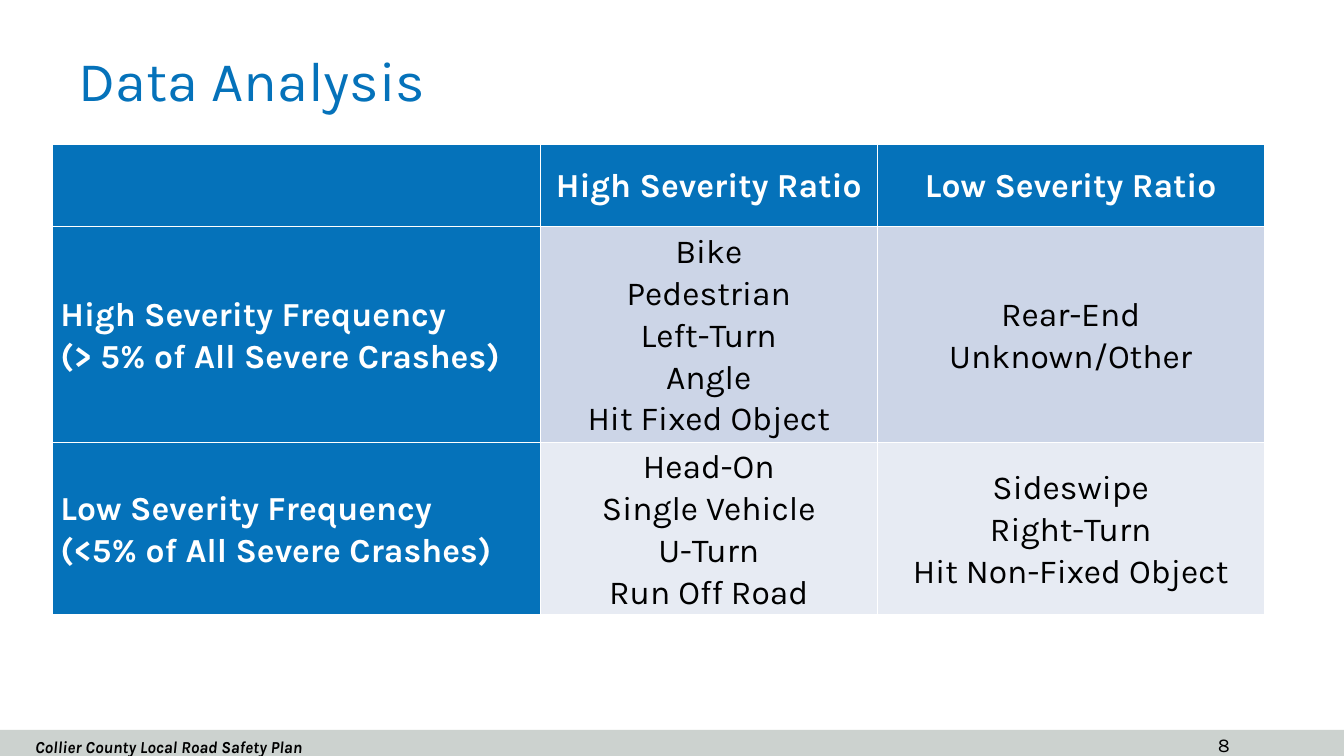
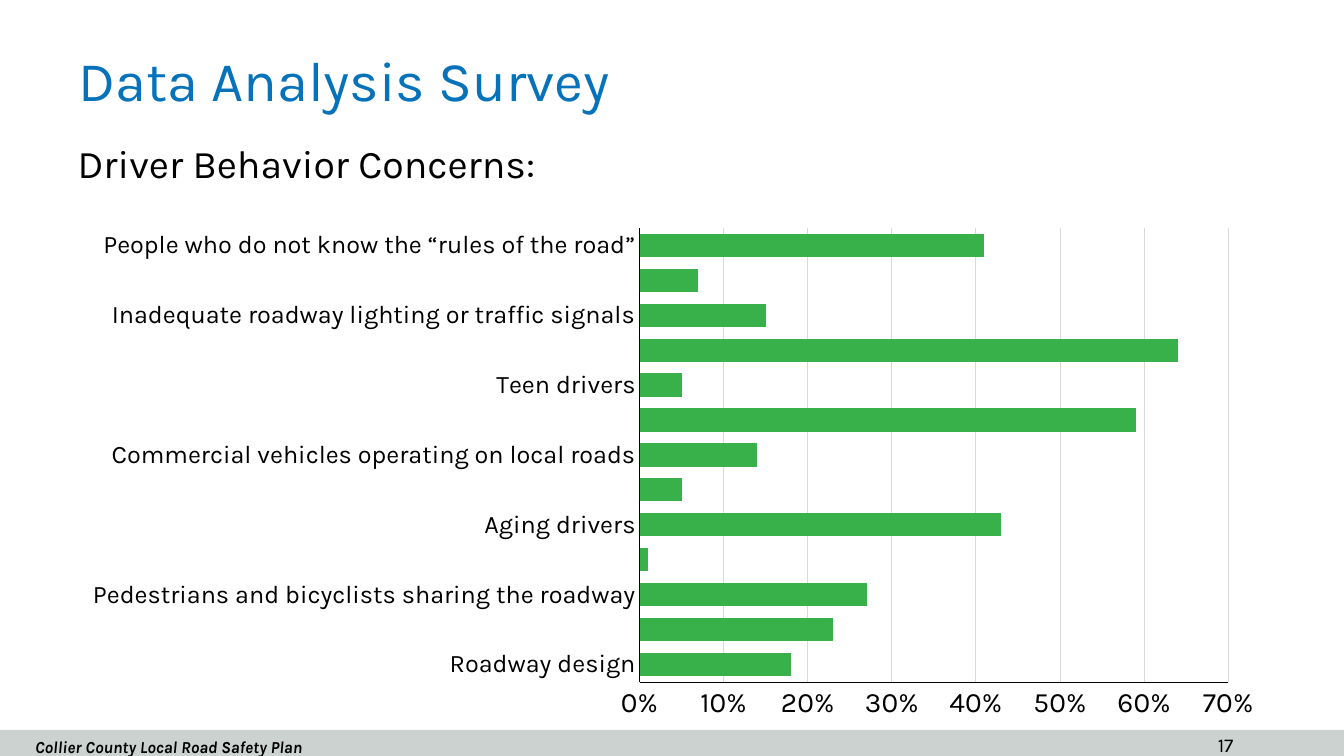
from lxml import etree
from pptx import Presentation
from pptx.chart.data import CategoryChartData
from pptx.dml.color import RGBColor
from pptx.enum import chart as ch, shapes, text
from pptx.oxml import parse_xml
from pptx.oxml.ns import nsdecls, qn
from pptx.util import Inches, Pt

FONT = "Karla"
BLUE = RGBColor(0x05, 0x72, 0xBA)
GREEN = RGBColor(0x39, 0xB1, 0x4A)
BAND = RGBColor(0xCC, 0xD2, 0xCF)
GRID = RGBColor(0xD9, 0xD9, 0xD9)
ROW_DARK = RGBColor(0xCC, 0xD5, 0xE7)
ROW_LIGHT = RGBColor(0xE7, 0xEB, 0xF3)
BLACK = RGBColor(0, 0, 0)
WHITE = RGBColor(0xFF, 0xFF, 0xFF)
LEFT, CENTER = text.PP_ALIGN.LEFT, text.PP_ALIGN.CENTER
TOP, MIDDLE = text.MSO_ANCHOR.TOP, text.MSO_ANCHOR.MIDDLE


def write(tf, content, size, color=BLACK, bold=False, italic=False,
          align=LEFT, anchor=TOP, spacing=None):
    """Fill a text frame, one paragraph per line of content."""
    tf.word_wrap = True
    tf.vertical_anchor = anchor
    for i, line in enumerate(content.split("\n")):
        p = tf.paragraphs[0] if i == 0 else tf.add_paragraph()
        p.alignment = align
        p.space_before = Pt(0)
        p.line_spacing = spacing
        r = p.add_run()
        r.text = line
        f = r.font
        f.name, f.size, f.bold, f.italic = FONT, Pt(size), bold, italic
        f.color.rgb = color


def place(sp, left, top, width, height):
    """Move a placeholder and keep its text at the set size."""
    sp.left, sp.top = Inches(left), Inches(top)
    sp.width, sp.height = Inches(width), Inches(height)
    sp.text_frame.auto_size = text.MSO_AUTO_SIZE.NONE


prs = Presentation()
prs.slide_width, prs.slide_height = Inches(13.33), Inches(7.5)

# Shared frame: footer band, logo space, title, plan name and page number
slides = []
for title, title_width, page, layout in [
    ("Data Analysis", 12.43, "8", 5),
    ("Data Analysis Survey", 10.61, "17", 1),
]:
    s = prs.slides.add_slide(prs.slide_layouts[layout])
    slides.append(s)

    for left, top, width, height, color in [
        (0, 7.24, 13.33, 0.28, BAND),
        (11.71, 0.17, 1.39, 0.8, WHITE),
    ]:
        sp = s.shapes.add_shape(shapes.MSO_SHAPE.RECTANGLE, Inches(left),
                                Inches(top), Inches(width), Inches(height))
        sp.shadow.inherit = False
        sp.fill.solid()
        sp.fill.fore_color.rgb = color
        sp.line.fill.background()

    place(s.shapes.title, 0.68, 0.48, title_width, 0.52)
    write(s.shapes.title.text_frame, title, 40, BLUE, spacing=0.9)
    sp = s.shapes.add_textbox(Inches(0.25), Inches(7.3), Inches(8.23), Inches(0.22))
    write(sp.text_frame, "Collier County Local Road Safety Plan", 12,
          bold=True, italic=True, anchor=MIDDLE)
    sp = s.shapes.add_textbox(Inches(11.98), Inches(7.22), Inches(0.57), Inches(0.4))
    write(sp.text_frame, page, 14)

table_slide, chart_slide = slides

# Severity table; the default table style draws the white borders
ROWS = [
    ["", "High Severity Ratio", "Low Severity Ratio"],
    ["High Severity Frequency\n(> 5% of All Severe Crashes)",
     "Bike\nPedestrian\nLeft-Turn\nAngle\nHit Fixed Object",
     "Rear-End\nUnknown/Other"],
    ["Low Severity Frequency\n(<5% of All Severe Crashes)",
     "Head-On\nSingle Vehicle\nU-Turn\nRun Off Road",
     "Sideswipe\nRight-Turn\nHit Non-Fixed Object"],
]
COL_WIDTHS = [4.84, 3.34, 3.84]
ROW_HEIGHTS = [0.82, 2.09, 1.67]
ROW_FILLS = [BLUE, ROW_DARK, ROW_LIGHT]

table = table_slide.shapes.add_table(
    len(ROWS), len(COL_WIDTHS), Inches(0.52), Inches(1.43),
    Inches(sum(COL_WIDTHS)), Inches(sum(ROW_HEIGHTS))).table
table.first_col = True
for col, width in zip(table.columns, COL_WIDTHS):
    col.width = Inches(width)
for i, row in enumerate(ROWS):
    table.rows[i].height = Inches(ROW_HEIGHTS[i])
    for j, content in enumerate(row):
        cell = table.cell(i, j)
        is_header = i == 0 or j == 0
        cell.margin_left = cell.margin_right = Inches(0.08)
        cell.margin_top = cell.margin_bottom = 0
        cell.vertical_anchor = MIDDLE
        if content:
            write(cell.text_frame, content, 24, WHITE if is_header else BLACK,
                  bold=is_header, align=CENTER if j else LEFT,
                  anchor=None, spacing=1.07)
        cell.fill.solid()
        cell.fill.fore_color.rgb = BLUE if is_header else ROW_FILLS[i]

# Survey heading
body = chart_slide.placeholders[1]
place(body, 0.67, 1.38, 11.99, 1.9)
pPr = body.text_frame.paragraphs[0]._p.get_or_add_pPr()
pPr.set("marL", "0")
pPr.set("indent", "0")
etree.SubElement(pPr, qn("a:buNone"))
write(body.text_frame, "Driver Behavior Concerns:", 28, spacing=0.9)

# Survey chart, listed from the bottom bar up
CONCERNS = [
    ("Roadway design", 0.18),
    ("People driving under the influence of alcohol, drugs, medications "
     "or other substances", 0.23),
    ("Pedestrians and bicyclists sharing the roadway", 0.27),
    ("People not wearing seatbelts", 0.01),
    ("Aging drivers", 0.43),
    ("Motorcyclists", 0.05),
    ("Commercial vehicles operating on local roads", 0.14),
    ("Speeding and aggressive driving", 0.59),
    ("Teen drivers", 0.05),
    ("People using cell phones or doing other activities while driving", 0.64),
    ("Inadequate roadway lighting or traffic signals", 0.15),
    ("Construction or utility work zones", 0.07),
    ("People who do not know the “rules of the road”", 0.41),
]
data = CategoryChartData(number_format="0%")
data.categories = [name for name, _ in CONCERNS]
data.add_series("Series 1", [value for _, value in CONCERNS])
chart = chart_slide.shapes.add_chart(
    ch.XL_CHART_TYPE.BAR_CLUSTERED, Inches(0.68), Inches(2.16),
    Inches(11.99), Inches(5.08), data).chart
chart.has_title = chart.has_legend = False
chart.font.name, chart.font.size = FONT, Pt(10)

plot = chart.plots[0]
plot.gap_width = 50
plot.vary_by_categories = False
fill = plot.series[0].format.fill
fill.solid()
fill.fore_color.rgb = GREEN

for axis, size in ((chart.category_axis, 18), (chart.value_axis, 20)):
    axis.major_tick_mark = axis.minor_tick_mark = ch.XL_TICK_MARK.NONE
    f = axis.tick_labels.font
    f.name, f.size = FONT, Pt(size)
    f.color.rgb = BLACK
    axis.format.line.color.rgb = BLACK
    axis.format.line.width = Pt(0.75)

axis = chart.value_axis
axis.minimum_scale, axis.maximum_scale, axis.major_unit = 0, 0.7, 0.1
axis.tick_labels.number_format = "0%"
axis.tick_labels.number_format_is_linked = False
axis.has_major_gridlines = True
axis.major_gridlines.format.line.color.rgb = GRID
axis.major_gridlines.format.line.width = Pt(0.75)

# Label every second bar
cat_ax = chart.category_axis._element
cat_ax.find(qn("c:noMultiLvlLbl")).addprevious(
    parse_xml(f'<c:tickLblSkip {nsdecls("c")} val="2"/>'))

# Fixed plot area, as shares of the chart frame
plot_area = cat_ax.getparent()
old = plot_area.find(qn("c:layout"))
if old is not None:
    plot_area.remove(old)
box = "".join(f'<c:{tag} val="{val}"/>' for tag, val in [
    ("layoutTarget", "inner"), ("xMode", "edge"), ("yMode", "edge"),
    ("x", 0.4724), ("y", 0.02), ("w", 0.487), ("h", 0.887)])
plot_area.insert(0, parse_xml(
    f'<c:layout {nsdecls("c")}><c:manualLayout>{box}</c:manualLayout></c:layout>'))

prs.save("out.pptx")
